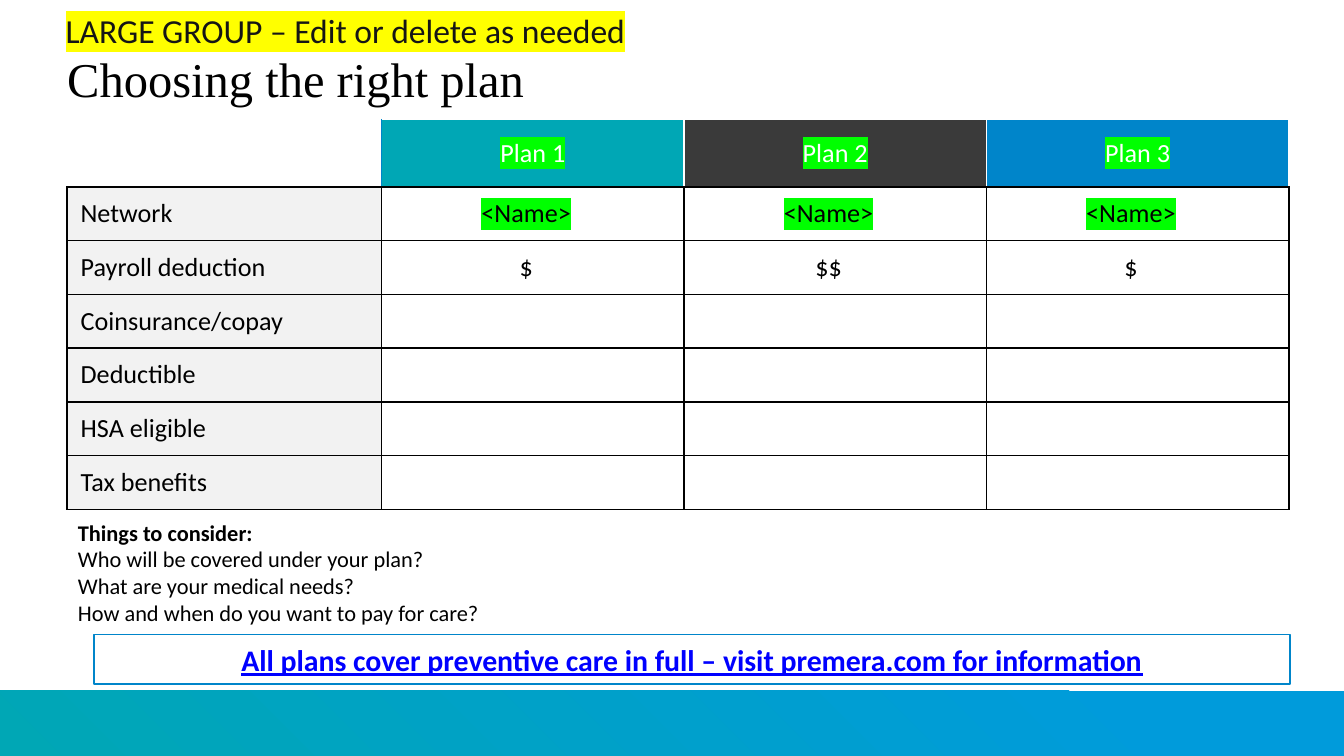
"""Build the plan comparison slide."""
import lxml.etree
import pptx
import pptx.dml.color
import pptx.enum.shapes
import pptx.enum.text
import pptx.oxml.ns
import pptx.util

Inches = pptx.util.Inches
Pt = pptx.util.Pt
qn = pptx.oxml.ns.qn
ALIGN = pptx.enum.text.PP_ALIGN
ANCHOR = pptx.enum.text.MSO_ANCHOR

COLORS = {
    "white": "FFFFFF", "black": "000000", "ink": "151515", "teal": "00A7B5",
    "charcoal": "3A3A3A", "blue": "0085CA", "sky": "009BDB", "label": "F2F2F2",
    "link": "0000FF", "yellow": "FFFF00", "green": "00FF00",
}
BANNER = "LARGE GROUP – Edit or delete as needed"
TITLE = "Choosing the right plan"
PLANS = [("Plan 1", "teal"), ("Plan 2", "charcoal"), ("Plan 3", "blue")]
ROWS = [
    ("Network", "<Name>", "<Name>", "<Name>"),
    ("Payroll deduction", "$", "$$", "$"),
    ("Coinsurance/copay", "", "", ""),
    ("Deductible", "", "", ""),
    ("HSA eligible", "", "", ""),
    ("Tax benefits", "", "", ""),
]
CONSIDER = [
    "Things to consider:",
    "Who will be covered under your plan?",
    "What are your medical needs?",
    "How and when do you want to pay for care?",
]
FOOTER = "All plans cover preventive care in full – visit premera.com for information"
LABEL_WIDTH, PLAN_WIDTH = 2.34, 2.25
HEADER_HEIGHT, ROW_HEIGHT = 0.5, 0.4


def rgb(name):
    return pptx.dml.color.RGBColor.from_string(COLORS[name])


def add_color(parent, tag, name):
    element = lxml.etree.SubElement(parent, qn(tag))
    lxml.etree.SubElement(element, qn("a:srgbClr"), val=COLORS[name])
    return element


def add_text(paragraph, text, size, color="black", font="Calibri", bold=False,
             underline=False, highlight=None):
    run = paragraph.add_run()
    run.text = text
    run.font.size = Pt(size)
    run.font.name = font
    run.font.bold = bold
    if underline:
        run.font.underline = True
    run.font.color.rgb = rgb(color)
    if highlight:
        properties = run.font._element
        mark = add_color(properties, "a:highlight", highlight)
        properties.find(qn("a:solidFill")).addnext(mark)


def set_frame(frame, left=0.1, anchor=ANCHOR.TOP):
    frame.word_wrap = True
    frame.auto_size = pptx.enum.text.MSO_AUTO_SIZE.NONE
    frame.margin_left = Inches(left)
    frame.margin_right = Inches(0.1)
    frame.margin_top = frame.margin_bottom = Inches(0.05)
    frame.vertical_anchor = anchor
    return frame


def set_borders(cell, colors):
    properties = cell._tc.get_or_add_tcPr()
    for index, (side, color) in enumerate(zip("LRTB", colors)):
        line = lxml.etree.Element(qn("a:ln" + side), w=str(Pt(1)))
        add_color(line, "a:solidFill", color)
        properties.insert(index, line)


def fill_cell(cell, text, fill, borders, left=0.1, align=ALIGN.CENTER, **style):
    cell.vertical_anchor = ANCHOR.MIDDLE
    cell.margin_left = Inches(left)
    cell.margin_top = cell.margin_bottom = Inches(0.05 if text else 0.03)
    if fill:
        cell.fill.solid()
        cell.fill.fore_color.rgb = rgb(fill)
    else:
        cell.fill.background()
    set_borders(cell, borders)
    if text:
        paragraph = cell.text_frame.paragraphs[0]
        paragraph.alignment = align
        add_text(paragraph, text, 14, **style)


def add_band(slide):
    band = slide.shapes.add_shape(
        pptx.enum.shapes.MSO_SHAPE.RECTANGLE,
        Inches(0), Inches(5.14), Inches(10), Inches(0.49))
    band.rotation = 180
    band.shadow.inherit = False
    band.line.fill.background()
    band.fill.gradient()
    band.fill.gradient_angle = 45
    for stop, position, color in zip(band.fill.gradient_stops, (0.15, 1), ("sky", "teal")):
        stop.position = position
        stop.color.rgb = rgb(color)


def add_plan_table(slide):
    height = HEADER_HEIGHT + ROW_HEIGHT * len(ROWS)
    width = LABEL_WIDTH + PLAN_WIDTH * len(PLANS)
    table = slide.shapes.add_table(
        len(ROWS) + 1, len(PLANS) + 1,
        Inches(0.5), Inches(0.89), Inches(width), Inches(height)).table
    table.first_row = table.horz_banding = False
    for index, column in enumerate(table.columns):
        column.width = Inches(PLAN_WIDTH if index else LABEL_WIDTH)
    for index, row in enumerate(table.rows):
        row.height = Inches(ROW_HEIGHT if index else HEADER_HEIGHT)

    fill_cell(table.cell(0, 0), "", None, ("white", "blue", "white", "black"))
    for column, (plan, color) in enumerate(PLANS, 1):
        edge = "blue" if column == 1 else "white"
        fill_cell(table.cell(0, column), plan, color, (edge, "white", "white", "black"),
                  color="white", highlight="green")
    grid = ("black",) * 4
    for row, (label, *values) in enumerate(ROWS, 1):
        fill_cell(table.cell(row, 0), label, "label", grid, align=ALIGN.LEFT)
        for column, value in enumerate(values, 1):
            fill_cell(table.cell(row, column), value, None, grid, left=0,
                      highlight="green" if value == "<Name>" else None)


def main():
    presentation = pptx.Presentation()
    presentation.slide_width = Inches(10)
    presentation.slide_height = Pt(405)
    slide = presentation.slides.add_slide(presentation.slide_layouts[5])
    add_band(slide)

    title = slide.shapes.title
    title.left, title.top = Inches(0.5), Inches(0)
    title.width, title.height = Inches(9.29), Inches(0.85)
    paragraph = set_frame(title.text_frame, 0, ANCHOR.BOTTOM).paragraphs[0]
    paragraph.alignment = ALIGN.LEFT
    add_text(paragraph, TITLE, 26, font="Times New Roman")

    banner = slide.shapes.add_textbox(Inches(0.39), Inches(0.02), Inches(5.24), Inches(0.4))
    frame = set_frame(banner.text_frame, anchor=ANCHOR.BOTTOM)
    add_text(frame.paragraphs[0], BANNER, 18, "ink", highlight="yellow")

    add_plan_table(slide)

    consider = slide.shapes.add_textbox(Inches(0.58), Inches(3.81), Inches(4.47), Inches(0.91))
    frame = set_frame(consider.text_frame, 0)
    for index, line in enumerate(CONSIDER):
        paragraph = frame.add_paragraph() if index else frame.paragraphs[0]
        add_text(paragraph, line, 12, bold=index == 0)

    footer = slide.shapes.add_shape(
        pptx.enum.shapes.MSO_SHAPE.RECTANGLE,
        Inches(0.7), Inches(4.72), Inches(8.9), Inches(0.37))
    footer.shadow.inherit = False
    footer.fill.solid()
    footer.fill.fore_color.rgb = rgb("white")
    footer.line.color.rgb = rgb("blue")
    footer.line.width = Pt(0.75)
    paragraph = set_frame(footer.text_frame, anchor=ANCHOR.MIDDLE).paragraphs[0]
    paragraph.alignment = ALIGN.CENTER
    add_text(paragraph, FOOTER, 16, "link", bold=True, underline=True)

    presentation.save("out.pptx")


if __name__ == "__main__":
    main()
